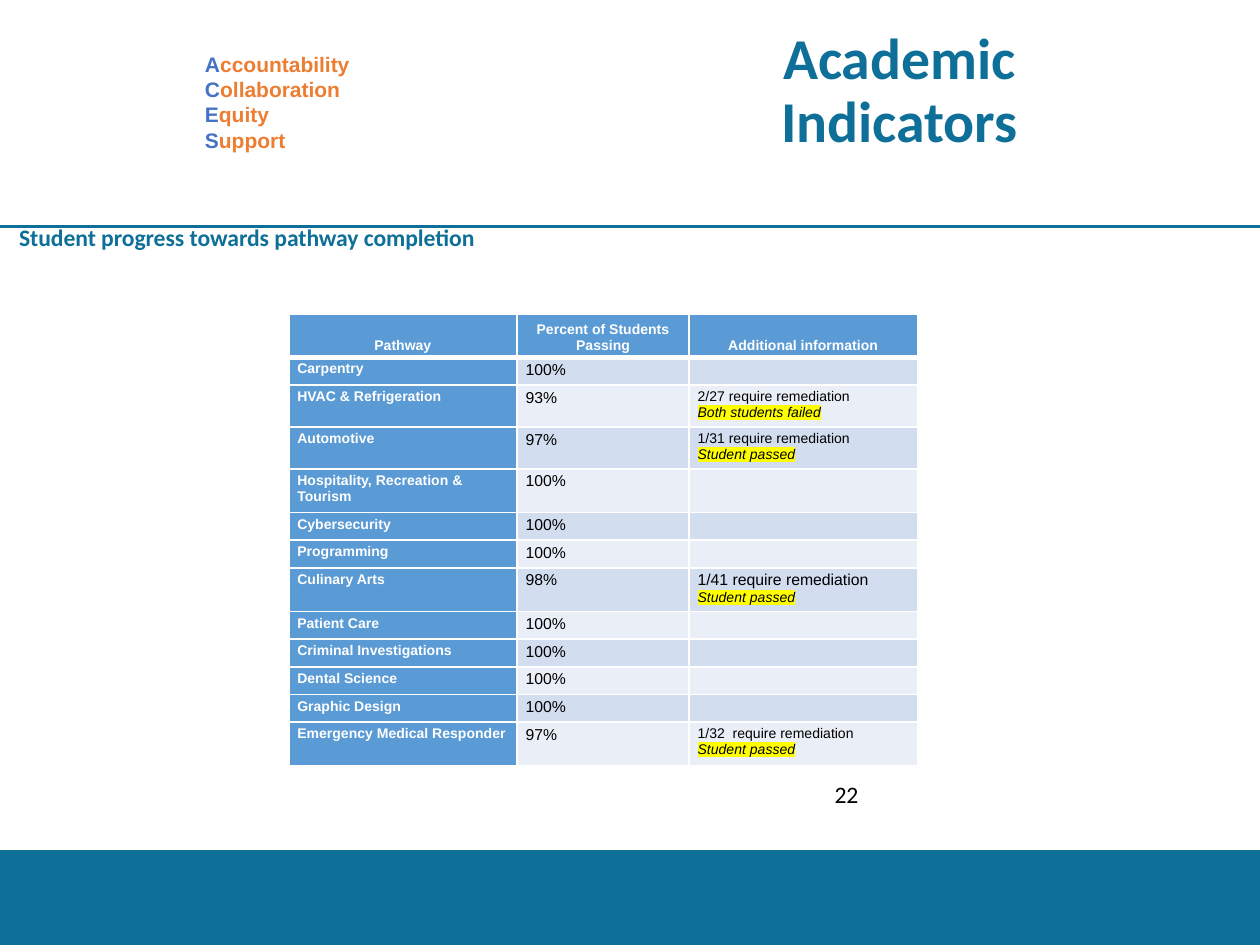
from dataclasses import dataclass

from lxml.etree import SubElement
from pptx import Presentation
from pptx.dml.color import RGBColor as RGB
from pptx.enum.shapes import MSO_CONNECTOR as CONNECTOR, MSO_SHAPE as SHAPE
from pptx.enum.text import MSO_ANCHOR as ANCHOR, MSO_AUTO_SIZE as AUTO_SIZE, PP_ALIGN as ALIGN
from pptx.oxml.ns import qn
from pptx.util import Pt

SLIDE_WIDTH, SLIDE_HEIGHT = 720, 540


@dataclass(frozen=True)
class Theme:
    teal: str = "0E6F98"
    blue: str = "4472C4"
    orange: str = "ED7D31"
    header: str = "5B9BD5"
    bands: tuple = ("D2DEEF", "EAEFF7")
    white: str = "FFFFFF"
    black: str = "000000"
    highlight: str = "FFFF00"
    heading_font: str = "Calibri"
    body_font: str = "Arial"
    title_size: float = 33
    subtitle_size: float = 13.5
    values_size: float = 12
    percent_size: float = 9
    cell_size: float = 8

    def text(self, size, color, font=None, **extra):
        """Return the format values of a run."""
        return {"name": font or self.body_font, "size": Pt(size), "color": color, **extra}


class SlideBuilder:
    def __init__(self, slide, theme):
        self.slide = slide
        self.theme = theme

    def add_paragraphs(self, frame, paragraphs, **paragraph_format):
        """Fill a text frame; each paragraph is a list of (text, format) runs."""
        for index, runs in enumerate(paragraphs):
            paragraph = frame.add_paragraph() if index else frame.paragraphs[0]
            for name, value in paragraph_format.items():
                setattr(paragraph, name, value)
            for text, format_values in runs:
                for line_number, line in enumerate(text.split("\n")):
                    if line_number:
                        paragraph.add_line_break()
                    self.add_run(paragraph, line, format_values)

    def add_run(self, paragraph, text, format_values):
        run = paragraph.add_run()
        run.text = text
        for name, value in format_values.items():
            if name == "color":
                run.font.color.rgb = RGB.from_string(value)
            elif name == "highlight":
                self.highlight(run, value)
            else:
                setattr(run.font, name, value)

    def highlight(self, run, color):
        properties = run._r.get_or_add_rPr()
        mark = SubElement(properties, qn("a:highlight"))
        SubElement(mark, qn("a:srgbClr"), val=color)
        properties.find(qn("a:solidFill")).addnext(mark)

    def set_frame(self, frame, vertical_inset):
        settings = {
            "word_wrap": True, "auto_size": AUTO_SIZE.NONE, "vertical_anchor": ANCHOR.TOP,
            "margin_left": Pt(5.4), "margin_right": Pt(5.4),
            "margin_top": Pt(vertical_inset), "margin_bottom": Pt(vertical_inset),
        }
        for name, value in settings.items():
            setattr(frame, name, value)

    def placeholder(self, index, box, paragraphs, **paragraph_format):
        shape = self.slide.placeholders[index]
        for name, value in zip(("left", "top", "width", "height"), box):
            setattr(shape, name, Pt(value))
        self.set_frame(shape.text_frame, 2.7)
        self.add_paragraphs(shape.text_frame, paragraphs, line_spacing=0.9,
                            space_before=Pt(0), **paragraph_format)
        for paragraph in shape.text_frame.paragraphs:
            properties = paragraph._p.get_or_add_pPr()
            properties.set("marL", "0")
            properties.set("indent", "0")
            SubElement(properties, qn("a:buNone"))

    def textbox(self, box, paragraphs, vertical_inset):
        frame = self.slide.shapes.add_textbox(*map(Pt, box)).text_frame
        self.set_frame(frame, vertical_inset)
        self.add_paragraphs(frame, paragraphs)

    def band(self, box, color):
        shape = self.slide.shapes.add_shape(SHAPE.RECTANGLE, *map(Pt, box))
        shape.shadow.inherit = False
        shape.fill.solid()
        shape.fill.fore_color.rgb = RGB.from_string(color)
        shape.line.color.rgb = RGB.from_string(color)
        shape.line.width = Pt(0.75)

    def rule(self, top, color):
        line = self.slide.shapes.add_connector(
            CONNECTOR.STRAIGHT, Pt(0), Pt(top), Pt(SLIDE_WIDTH), Pt(top))
        line.line.color.rgb = RGB.from_string(color)
        line.line.width = Pt(1.5)
        SubElement(line._element.spPr, qn("a:effectLst"))

    def table(self, left, top, widths, heights):
        table = self.slide.shapes.add_table(
            len(heights), len(widths), Pt(left), Pt(top),
            Pt(sum(widths)), Pt(sum(heights))).table
        for column, width in zip(table.columns, widths):
            column.width = Pt(width)
        for row, height in zip(table.rows, heights):
            row.height = Pt(height)
        return table

    def cell(self, cell, paragraphs, fill, is_header=False):
        settings = {
            "margin_left": Pt(4.9), "margin_right": Pt(4.9),
            "margin_top": Pt(2.2), "margin_bottom": Pt(2.2),
            "vertical_anchor": ANCHOR.BOTTOM if is_header else ANCHOR.TOP,
        }
        for name, value in settings.items():
            setattr(cell, name, value)
        cell.fill.solid()
        cell.fill.fore_color.rgb = RGB.from_string(fill)
        self.add_paragraphs(cell.text_frame, paragraphs,
                            alignment=ALIGN.CENTER if is_header else ALIGN.LEFT)
        if not paragraphs:
            # The end mark keeps an empty cell from stretching its row.
            SubElement(cell.text_frame.paragraphs[0]._p, qn("a:endParaRPr"),
                       sz=str(self.theme.cell_size * 100))
        properties = cell._tc.get_or_add_tcPr()
        for index, side in enumerate("LRTB"):
            width = Pt(3 if is_header and side == "B" else 1)
            border = SubElement(properties, qn(f"a:ln{side}"), w=str(width))
            fill_element = SubElement(border, qn("a:solidFill"))
            SubElement(fill_element, qn("a:srgbClr"), val=self.theme.white)
            properties.insert(index, border)


HEADINGS = ("Pathway", "Percent of Students Passing", "Additional information")
HEADER_HEIGHT, SHORT, MEDIUM, TALL = 24.8, 15.8, 24, 25
# Row height, pathway, percent passing, remediation and its outcome
PATHWAYS = [
    (SHORT, "Carpentry", "100%"),
    (MEDIUM, "HVAC & Refrigeration", "93%", "2/27 require remediation", "Both students failed"),
    (MEDIUM, "Automotive", "97%", "1/31 require remediation", "Student passed"),
    (TALL, "Hospitality, Recreation & Tourism", "100%"),
    (SHORT, "Cybersecurity", "100%"),
    (SHORT, "Programming", "100%"),
    (TALL, "Culinary Arts", "98%", "1/41 require remediation", "Student passed"),
    (SHORT, "Patient Care", "100%"),
    (SHORT, "Criminal Investigations", "100%"),
    (SHORT, "Dental Science", "100%"),
    (SHORT, "Graphic Design", "100%"),
    (TALL, "Emergency Medical Responder", "97%", "1/32  require remediation", "Student passed"),
]


def add_pathway_table(builder):
    theme = builder.theme
    label = theme.text(theme.cell_size, theme.white, bold=True)
    percent_text = theme.text(theme.percent_size, theme.black)
    note = theme.text(theme.cell_size, theme.black)
    outcome_text = {**note, "italic": True, "highlight": theme.highlight}

    heights = [HEADER_HEIGHT] + [row[0] for row in PATHWAYS]
    table = builder.table(165, 179.4, (130.5, 98.3, 130.5), heights)
    for column, heading in enumerate(HEADINGS):
        builder.cell(table.cell(0, column), [[(heading, label)]], theme.header, is_header=True)
    for row, (_, pathway, percent, *remarks) in enumerate(PATHWAYS, start=1):
        band = theme.bands[(row - 1) % 2]
        remark_text = percent_text if pathway == "Culinary Arts" else note
        remark_runs = [[run] for run in zip(remarks, (remark_text, outcome_text))]
        builder.cell(table.cell(row, 0), [[(pathway, label)]], theme.header)
        builder.cell(table.cell(row, 1), [[(percent, percent_text)]], band)
        builder.cell(table.cell(row, 2), remark_runs, band)


def main():
    presentation = Presentation()
    presentation.slide_width, presentation.slide_height = Pt(SLIDE_WIDTH), Pt(SLIDE_HEIGHT)
    theme = Theme()
    slide = presentation.slides.add_slide(presentation.slide_layouts[1])
    builder = SlideBuilder(slide, theme)

    builder.band((0, 486, SLIDE_WIDTH, 54), theme.teal)
    builder.rule(129.4, theme.teal)
    title = theme.text(theme.title_size, theme.teal, theme.heading_font, bold=True)
    builder.placeholder(0, (384.5, 14.4, 259, 108), [[("Academic\nIndicators", title)]],
                        alignment=ALIGN.CENTER)
    subtitle = {**title, "size": Pt(theme.subtitle_size)}
    builder.placeholder(1, (5.5, 126.7, 500, 42),
                        [[("Student progress towards pathway completion", subtitle)]],
                        alignment=ALIGN.LEFT)

    initial = theme.text(theme.values_size, theme.blue, bold=True)
    remainder = {**initial, "color": theme.orange}
    values = ("Accountability", "Collaboration", "Equity", "Support")
    builder.textbox((111.7, 24, 214, 69),
                    [[(word[0], initial), (word[1:], remainder)] for word in values], 5.4)
    number = theme.text(theme.subtitle_size, theme.black, theme.heading_font)
    builder.textbox((471.5, 443, 122, 21.6), [[("22", number)]], 2.7)
    add_pathway_table(builder)
    presentation.save("out.pptx")


if __name__ == "__main__":
    main()
